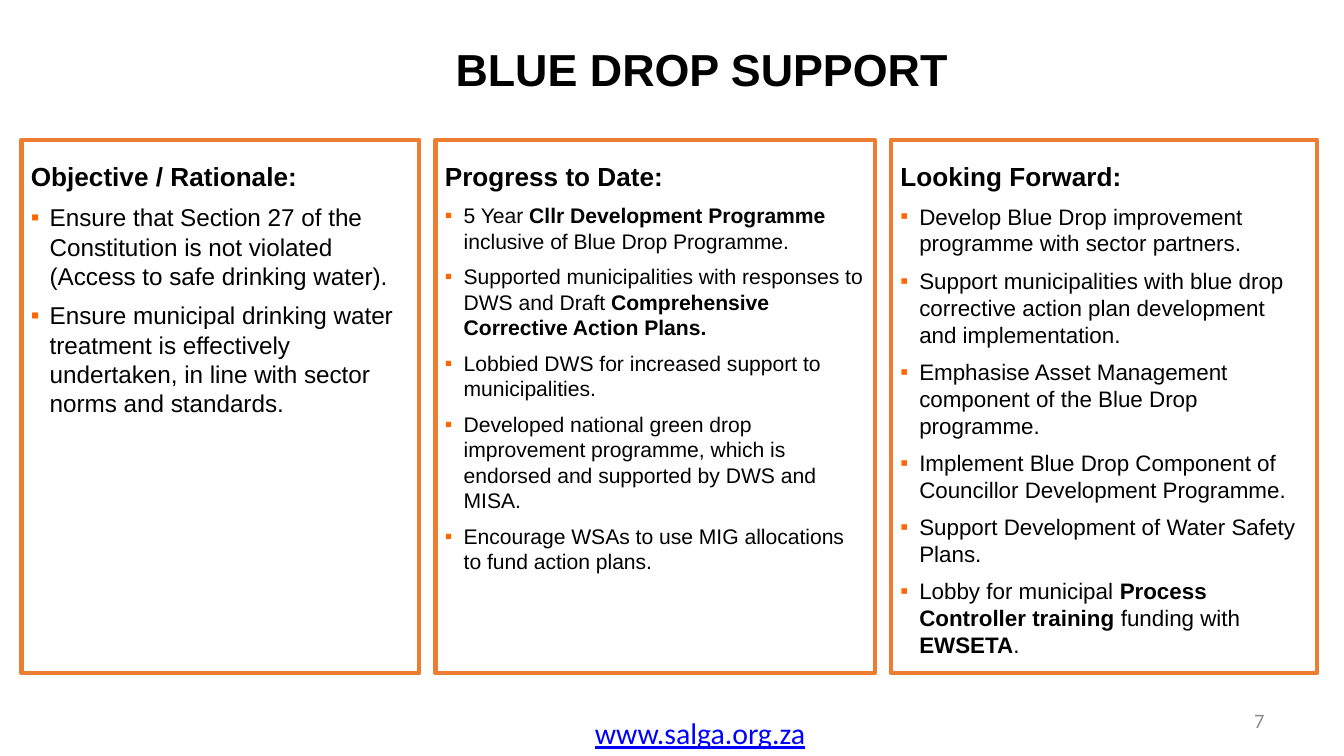
from dataclasses import dataclass

from lxml import etree
from pptx import Presentation
from pptx import util as u
from pptx.dml.color import RGBColor
from pptx.enum import shapes, text
from pptx.oxml import ns

BLACK = RGBColor(0x00, 0x00, 0x00)
BLUE = RGBColor(0x00, 0x00, 0xFF)
GREY = RGBColor(0x8C, 0x8C, 0x8C)
ORANGE = RGBColor(0xED, 0x7D, 0x31)
BULLET_ORANGE = RGBColor(0xFF, 0x66, 0x00)
BOLD_MARK = "**"
PAGE_WIDTH = u.Inches(10)
PAGE_HEIGHT = PAGE_WIDTH * 9 // 16
PANEL_TOP, PANEL_HEIGHT = 1.04, 3.97
INDENT = u.Inches(0.14)


@dataclass(frozen=True)
class Label:
    words: str
    left: float
    top: float
    width: float
    height: float
    align: text.PP_ALIGN
    anchor: text.MSO_ANCHOR
    size: float
    font: str
    color: RGBColor
    bold: bool = False
    underline: bool = False


@dataclass(frozen=True)
class Panel:
    heading: str
    left: float
    width: float
    size: float
    points: tuple[str, ...]
    heading_align: text.PP_ALIGN = text.PP_ALIGN.LEFT


TITLE = Label("BLUE DROP SUPPORT", 1.64, 0.21, 7.16, 0.6, text.PP_ALIGN.CENTER,
              text.MSO_ANCHOR.MIDDLE, 24, "Arial", BLACK, bold=True)
FOOTERS = (
    Label("www.salga.org.za", 4.08, 5.28, 2.26, 0.36, text.PP_ALIGN.CENTER,
          text.MSO_ANCHOR.TOP, 16, "Calibri", BLUE, underline=True),
    Label("7", 7.17, 5.21, 2.33, 0.3, text.PP_ALIGN.RIGHT,
          text.MSO_ANCHOR.MIDDLE, 11, "Calibri", GREY),
)
PANELS = (
    Panel("Objective / Rationale:", 0.16, 2.96, 13, (
        "Ensure that Section 27 of the Constitution is not violated "
        "(Access to safe drinking water).",
        "Ensure municipal drinking water treatment is effectively undertaken, "
        "in line with sector norms and standards.",
    )),
    Panel("Looking Forward:", 6.63, 3.17, 12, (
        "Develop Blue Drop improvement programme with sector partners.",
        "Support municipalities with blue drop corrective action plan "
        "development and implementation.",
        "Emphasise Asset Management component of the Blue Drop programme.",
        "Implement Blue Drop Component of Councillor Development Programme.",
        "Support Development of Water Safety Plans.",
        "Lobby for municipal **Process Controller training** funding with **EWSETA**.",
    ), text.PP_ALIGN.JUSTIFY),
    Panel("Progress to Date:", 3.24, 3.27, 11.3, (
        "5 Year **Cllr Development Programme **inclusive of Blue Drop Programme.",
        "Supported municipalities with responses to DWS and Draft "
        "**Comprehensive Corrective Action Plans.**",
        "Lobbied DWS for increased support to municipalities.",
        "Developed national green drop improvement programme, which is "
        "endorsed and supported by DWS and MISA.",
        "Encourage WSAs to use MIG allocations to fund action plans.",
    )),
)


def apply(target, formats: dict) -> None:
    for name, value in formats.items():
        setattr(target, name, value)


def format_frame(frame, anchor: text.MSO_ANCHOR, side: float) -> None:
    apply(frame, {
        "word_wrap": True,
        "auto_size": text.MSO_AUTO_SIZE.NONE,
        "vertical_anchor": anchor,
        "margin_left": u.Inches(side),
        "margin_right": u.Inches(side),
        "margin_top": u.Inches(0.04),
        "margin_bottom": u.Inches(0.04),
    })


def add_span(para, words: str, size: float, font: str, color: RGBColor,
             bold: bool = False, underline: bool = False) -> None:
    span = para.add_run()
    span.text = words
    apply(span.font, {"size": u.Pt(size), "name": font, "bold": bold,
                      "underline": underline})
    span.font.color.rgb = color


def write_label(box, label: Label) -> None:
    apply(box, {name: u.Inches(getattr(label, name))
                for name in ("left", "top", "width", "height")})
    format_frame(box.text_frame, label.anchor, 0.09)
    para = box.text_frame.paragraphs[0]
    para.alignment = label.align
    add_span(para, label.words, label.size, label.font, label.color,
             label.bold, label.underline)


def add_bullet(para) -> None:
    properties = para._p.get_or_add_pPr()
    properties.set("marL", str(INDENT))
    properties.set("indent", str(-INDENT))
    color = etree.SubElement(properties, ns.qn("a:buClr"))
    etree.SubElement(color, ns.qn("a:srgbClr"), val=str(BULLET_ORANGE))
    etree.SubElement(properties, ns.qn("a:buFont"), typeface="Arial")
    etree.SubElement(properties, ns.qn("a:buChar"), char="▪")


def add_panel(page, panel: Panel) -> None:
    box = page.shapes.add_shape(
        shapes.MSO_SHAPE.RECTANGLE, u.Inches(panel.left), u.Inches(PANEL_TOP),
        u.Inches(panel.width), u.Inches(PANEL_HEIGHT))
    box.shadow.inherit = False
    box.fill.background()
    box.line.color.rgb = ORANGE
    box.line.width = u.Pt(2.25)
    frame = box.text_frame
    format_frame(frame, text.MSO_ANCHOR.TOP, 0.07)
    heading = frame.paragraphs[0]
    apply(heading, {"alignment": panel.heading_align, "line_spacing": 1.5})
    add_span(heading, panel.heading, 14, "Arial", BLACK, bold=True)
    for point in panel.points:
        para = frame.add_paragraph()
        add_bullet(para)
        apply(para, {"alignment": text.PP_ALIGN.LEFT, "space_before": u.Pt(5.6)})
        for index, words in enumerate(point.split(BOLD_MARK)):
            if words:
                add_span(para, words, panel.size, "Arial", BLACK, bold=index % 2 == 1)


def main() -> None:
    deck = Presentation()
    apply(deck, {"slide_width": PAGE_WIDTH, "slide_height": PAGE_HEIGHT})
    page = deck.slides.add_slide(deck.slide_layouts.get_by_name("Title Only"))
    write_label(page.shapes.title, TITLE)
    for footer in FOOTERS:
        write_label(page.shapes.add_textbox(0, 0, 0, 0), footer)
    for panel in PANELS:
        add_panel(page, panel)
    deck.save("out.pptx")


if __name__ == "__main__":
    main()
